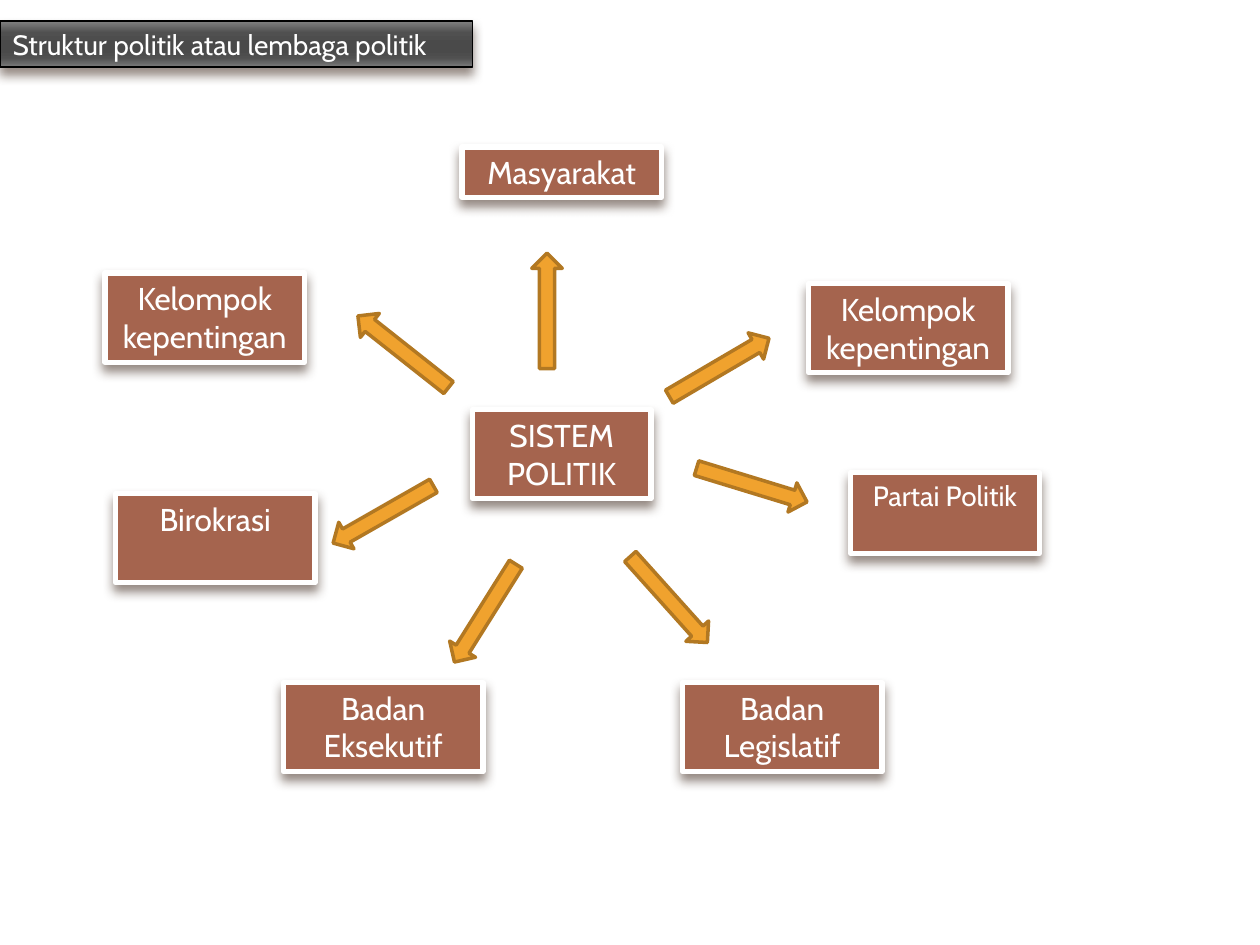
from lxml import etree
from pptx import Presentation
from pptx import util as u
from pptx.dml.color import RGBColor
from pptx.enum import shapes, text
from pptx.oxml.ns import qn

WHITE = RGBColor(0xFF, 0xFF, 0xFF)
BLACK = RGBColor(0x00, 0x00, 0x00)
BROWN = RGBColor(0xA5, 0x64, 0x4E)
AMBER = RGBColor(0xF0, 0xA2, 0x2E)
OCHRE = RGBColor(0xB2, 0x78, 0x22)
SHADOW = RGBColor(0x4E, 0x3B, 0x30)
BAR_STOPS = [
    (0, RGBColor(0x82, 0x82, 0x82)),
    (25, RGBColor(0x50, 0x50, 0x50)),
    (50, RGBColor(0x4A, 0x4A, 0x4A)),
    (65, RGBColor(0x4A, 0x4A, 0x4A)),
    (80, RGBColor(0x50, 0x50, 0x50)),
    (100, RGBColor(0x7A, 0x7A, 0x7A)),
]
FONT = "Cabin"
CELL = u.Inches(10) // 120

NODES = [
    ("SISTEM POLITIK", 35, 25, 17, 8.5, 18),
    ("Kelompok kepentingan", 67, 13, 19, 8.5, 18),
    ("Partai Politik", 71, 31, 18, 7.7, 16),
    ("Badan Legislatif", 55, 51, 19, 8.5, 18),
    ("Masyarakat", 34, 0, 19, 4.8, 18),
    ("Kelompok kepentingan", 0, 12, 19, 8.5, 18),
    ("Birokrasi", 1, 33, 19, 8.5, 18),
    ("Badan Eksekutif", 17, 51, 19, 8.5, 18),
]
ARROW_SIZE = (11, 2.9)
ARROWS = [
    (42.1, 15.6, 270),
    (58.5, 21, 329.6),
    (28.4, 19.5, 218.3),
    (26.5, 35, 150.3),
    (36.2, 44.4, 122.1),
    (53.7, 43.1, 48.1),
    (61.6, 32.2, 17),
]


def cells(*values):
    return [u.Emu(round(v * CELL)) for v in values]


def add_color(parent, color):
    return etree.SubElement(parent, qn("a:srgbClr"), val=str(color))


def set_line(sp, color, width):
    sp.line.color.rgb = color
    sp.line.width = u.Pt(width)


def drop_shadow(sp):
    spPr = sp._element.spPr
    effects = spPr.find(qn("a:effectLst"))
    if effects is None:
        sp.shadow.inherit = False
        effects = spPr.find(qn("a:effectLst"))
    shadow = etree.SubElement(
        effects, qn("a:outerShdw"), blurRad=str(u.Pt(6)), dist=str(u.Pt(4)),
        dir="5400000", algn="ctr", rotWithShape="0")
    etree.SubElement(add_color(shadow, SHADOW), qn("a:alpha"), val="60000")


def write(sp, words, size, align):
    tf = sp.text_frame
    tf.text = words
    tf.word_wrap = True
    tf.auto_size = text.MSO_AUTO_SIZE.NONE
    tf.vertical_anchor = text.MSO_ANCHOR.TOP
    p = tf.paragraphs[0]
    p.alignment = align
    f = p.runs[0].font
    f.name, f.size, f.color.rgb = FONT, u.Pt(size), WHITE


def title_bar(slide, box, words):
    sp = slide.shapes.title
    sp.left, sp.top, sp.width, sp.height = cells(*box)
    sp.fill.gradient()
    sp.fill.gradient_angle = 270
    stops = sp._element.spPr.find(qn("a:gradFill")).find(qn("a:gsLst"))
    for old in list(stops):
        stops.remove(old)
    for pos, color in BAR_STOPS:
        add_color(etree.SubElement(stops, qn("a:gs"), pos=str(pos * 1000)), color)
    set_line(sp, BLACK, 0.79)
    drop_shadow(sp)
    write(sp, words, 16, text.PP_ALIGN.LEFT)


def node(slide, box, words, size):
    sp = slide.shapes.add_shape(shapes.MSO_SHAPE.RECTANGLE, *cells(*box))
    sp.fill.solid()
    sp.fill.fore_color.rgb = BROWN
    set_line(sp, WHITE, 3)
    drop_shadow(sp)
    write(sp, words, size, text.PP_ALIGN.CENTER)


def arrow(slide, cx, cy, angle):
    w, h = ARROW_SIZE
    sp = slide.shapes.add_shape(
        shapes.MSO_SHAPE.RIGHT_ARROW, *cells(cx - w / 2, cy - h / 2, w, h))
    sp.rotation = angle
    sp.fill.solid()
    sp.fill.fore_color.rgb = AMBER
    set_line(sp, OCHRE, 2)
    sp.shadow.inherit = False


def hub_diagram(slide, left, top):
    for words, x, y, w, h, size in NODES:
        node(slide, (left + x, top + y, w, h), words, size)
    for cx, cy, angle in ARROWS:
        arrow(slide, left + cx, top + cy, angle)


def main():
    prs = Presentation()
    prs.slide_width, prs.slide_height = u.Inches(10), u.Inches(7.5)
    slide = prs.slides.add_slide(prs.slide_layouts[5])
    title_bar(slide, (0, 2, 45, 4.4), "Struktur politik atau lembaga politik")
    hub_diagram(slide, 10, 14)
    prs.save("out.pptx")


if __name__ == "__main__":
    main()
